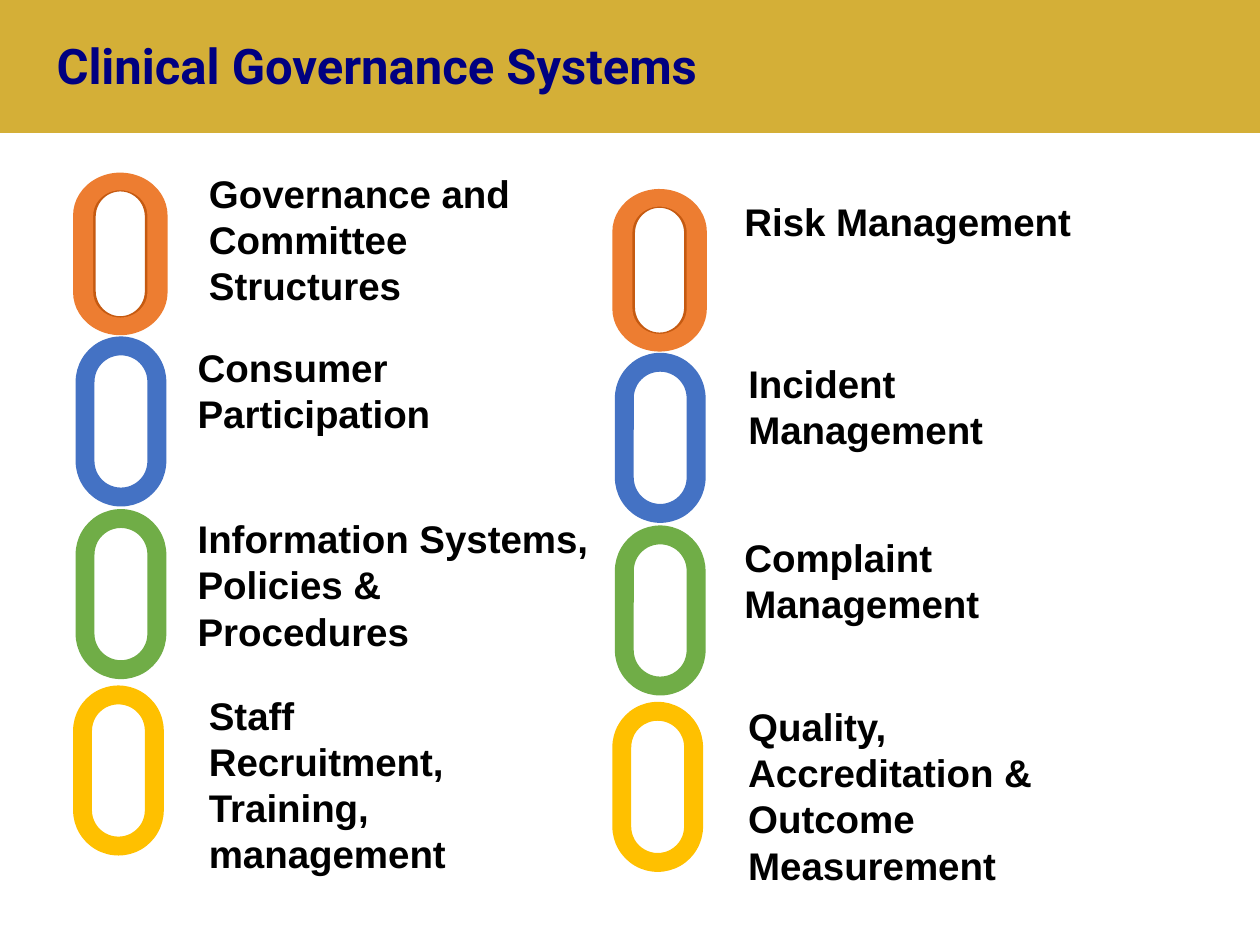
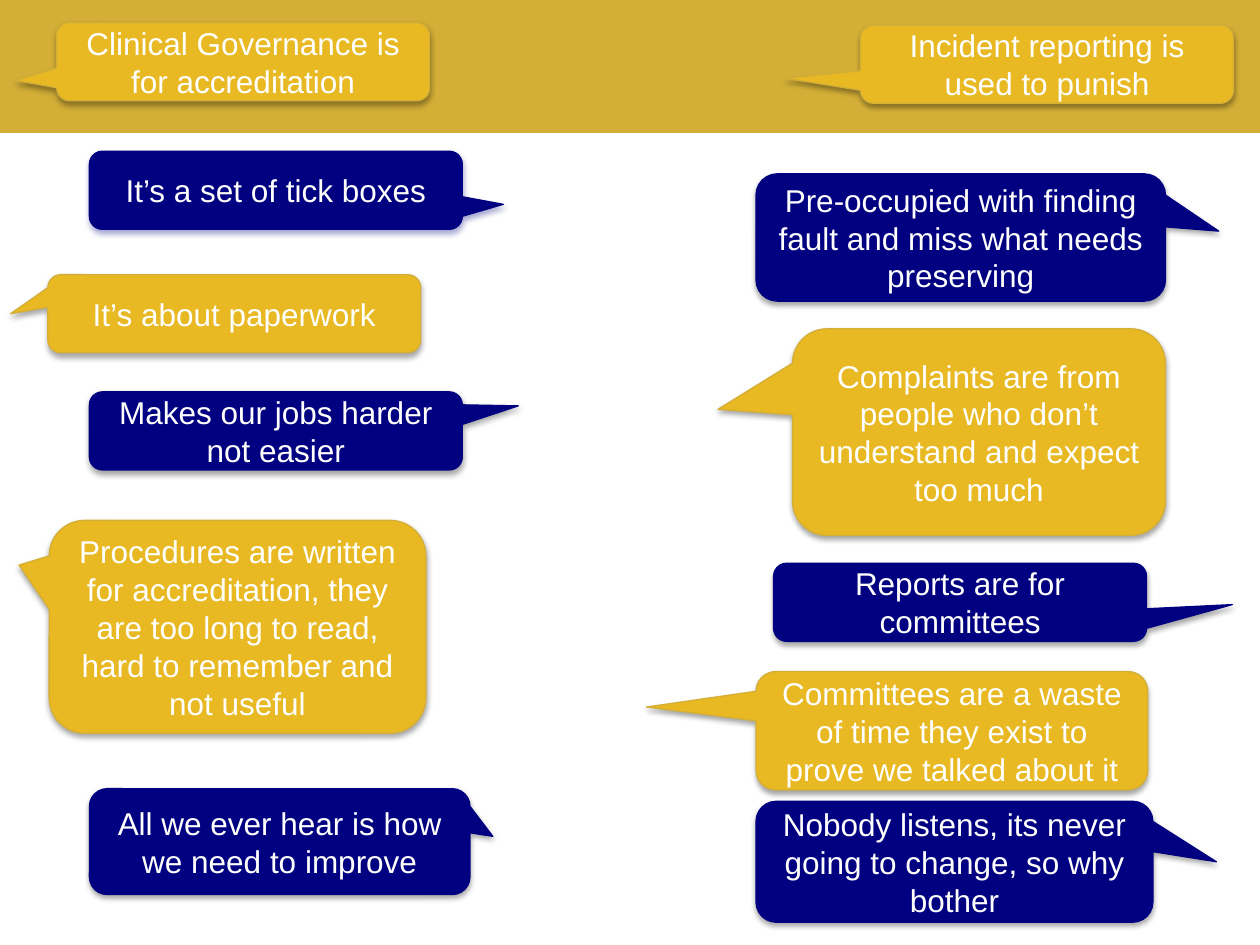
from dataclasses import dataclass

from lxml import etree
from pptx import Presentation
from pptx.dml.color import RGBColor
from pptx.enum.shapes import MSO_SHAPE
from pptx.enum.text import MSO_ANCHOR, MSO_AUTO_SIZE, PP_ALIGN
from pptx.oxml.ns import qn
from pptx.util import Emu, Pt

RECT = MSO_SHAPE.RECTANGLE
CALLOUT = MSO_SHAPE.ROUNDED_RECTANGULAR_CALLOUT
MIDDLE = MSO_ANCHOR.MIDDLE
CENTER = PP_ALIGN.CENTER
LEFT = PP_ALIGN.LEFT
GROW = MSO_AUTO_SIZE.SHAPE_TO_FIT_TEXT

EMU_PER_PX = 9144
SLIDE_W, SLIDE_H = 1000, 750
BAND_H = 105
DEGREE = 60000
QUARTER_STARTS = {0: 270, 2: 0, 3: 90, 5: 180}
SEGMENTS = 6


@dataclass(frozen=True)
class Theme:
    band: str = "D4AF37"
    navy: str = "000080"
    gold: str = "E8B923"
    white: str = "FFFFFF"
    black: str = "000000"
    orange: str = "ED7D31"
    rust: str = "C55A11"
    blue: str = "4472C4"
    green: str = "70AD47"
    amber: str = "FFC000"
    heading_font: str = "Roboto"
    body_font: str = "Arial"
    title_size: int = 28
    label_size: int = 22
    callout_size: int = 18
    line_width: float = 0.75


THEME = Theme()
TITLE_FORMAT = {"name": THEME.heading_font, "size": Pt(THEME.title_size), "bold": True}
LABEL_FORMAT = {"name": THEME.body_font, "size": Pt(THEME.label_size), "bold": True}
CALLOUT_FORMAT = {"name": THEME.body_font, "size": Pt(THEME.callout_size), "bold": False}


@dataclass(frozen=True)
class Capsule:
    x: int
    y: int
    w: int
    h: int
    cap: int


@dataclass(frozen=True)
class Ring:
    x: int
    y: int
    w: int
    h: int
    cap: int
    side: int
    end: int
    color: str


@dataclass(frozen=True)
class Label:
    x: int
    y: int
    w: int
    h: int
    lines: tuple[str, ...]


@dataclass(frozen=True)
class Callout:
    x: int
    y: int
    w: int
    h: int
    tip_x: float
    tip_y: float
    fill: str
    text: str
    shadow: str = THEME.black


RINGS = (
    Ring(60, 267, 72, 135, 36, 15, 15, THEME.blue),
    Ring(62, 138, 67, 127, 34, 14, 14, THEME.rust),
    Ring(58, 137, 75, 129, 34, 16, 14, THEME.orange),
    Ring(60, 404, 72, 135, 36, 15, 15, THEME.green),
    Ring(58, 544, 72, 135, 36, 15, 15, THEME.amber),
)
CHAIN_OFFSETS = ((0, 0), (428, 13))

LABELS = (
    Label(156, 130, 285, 121, ("Governance and Committee Structures",)),
    Label(147, 268, 285, 84, ("Consumer Participation",)),
    Label(147, 404, 375, 121, ("Information Systems, Policies &", "Procedures")),
    Label(156, 544, 250, 158, ("Staff Recruitment, Training, management",)),
    Label(581, 152, 285, 47, ("Risk Management",)),
    Label(584, 281, 285, 84, ("Incident Management",)),
    Label(581, 419, 216, 84, ("Complaint Management",)),
    Label(584, 553, 250, 158, ("Quality, Accreditation & Outcome Measurement",)),
)

CALLOUTS = (
    Callout(45, 18, 296, 62, -0.61, 0.24, THEME.gold,
            "Clinical Governance is for accreditation"),
    Callout(71, 120, 296, 62, 0.61, 0.18, THEME.navy,
            "It’s a set of tick boxes", THEME.navy),
    Callout(38, 218, 296, 62, -0.6, 0, THEME.gold, "It’s about paperwork"),
    Callout(71, 311, 296, 62, 0.65, -0.32, THEME.navy,
            "Makes our jobs harder not easier"),
    Callout(39, 413, 299, 169, -0.58, -0.29, THEME.gold,
            "Procedures are written for accreditation, they are too long to read, "
            "hard to remember and not useful"),
    Callout(71, 626, 302, 84, 0.56, -0.05, THEME.navy,
            "All we ever hear is how we need to improve"),
    Callout(683, 20, 296, 62, -0.7, 0.18, THEME.gold,
            "Incident reporting is used to punish"),
    Callout(600, 138, 325, 101, 0.63, -0.05, THEME.navy,
            "Pre-occupied with finding fault and miss what needs preserving"),
    Callout(629, 261, 296, 164, -0.7, -0.11, THEME.gold,
            "Complaints are from people who don’t understand and expect too much"),
    Callout(614, 447, 296, 62, 0.73, 0.03, THEME.navy, "Reports are for committees"),
    Callout(600, 533, 311, 94, -0.78, -0.2, THEME.gold,
            "Committees are a waste of time they exist to prove we talked about it"),
    Callout(600, 636, 315, 96, 0.66, 0, THEME.navy,
            "Nobody listens, its never going to change, so why bother"),
)


def px(n: float) -> Emu:
    return Emu(round(n * EMU_PER_PX))


def rgb(color: str) -> RGBColor:
    return RGBColor.from_string(color)


def paint(sp, fill: str, line: str) -> None:
    sp.shadow.inherit = False
    sp.fill.solid()
    sp.fill.fore_color.rgb = rgb(fill)
    sp.line.color.rgb = rgb(line)
    sp.line.width = Pt(THEME.line_width)


def write(tf, lines: tuple[str, ...], fmt: dict, color: str, align=LEFT) -> None:
    tf.word_wrap = True
    for i, line in enumerate(lines):
        p = tf.paragraphs[0] if i == 0 else tf.add_paragraph()
        p.alignment = align
        r = p.add_run()
        r.text = line
        for name, value in fmt.items():
            setattr(r.font, name, value)
        r.font.color.rgb = rgb(color)


def add_band(s) -> None:
    sp = s.shapes.add_shape(RECT, 0, 0, px(SLIDE_W), px(BAND_H))
    paint(sp, THEME.band, THEME.band)


def add_label(s, label: Label, fmt: dict, color: str) -> None:
    sp = s.shapes.add_textbox(px(label.x), px(label.y), px(label.w), px(label.h))
    write(sp.text_frame, label.lines, fmt, color)
    sp.text_frame.auto_size = GROW


def corners(c: Capsule) -> list[tuple[Emu, Emu]]:
    mid, right, bottom = c.x + c.w / 2, c.x + c.w, c.y + c.h
    upper, lower = c.y + c.cap, bottom - c.cap
    points = ((mid, c.y), (right, upper), (right, lower), (mid, bottom),
              (c.x, lower), (c.x, upper), (mid, c.y))
    return [(px(x), px(y)) for x, y in points]


def round_corners(sp, capsules: tuple[Capsule, ...]) -> None:
    lines = list(sp._element.iter(qn("a:lnTo")))
    for i, line in enumerate(lines):
        contour, segment = divmod(i, SEGMENTS)
        if segment in QUARTER_STARTS:
            c = capsules[contour]
            arc = etree.Element(qn("a:arcTo"), wR=str(px(c.w / 2)), hR=str(px(c.cap)),
                                stAng=str(QUARTER_STARTS[segment] * DEGREE),
                                swAng=str(90 * DEGREE))
            line.getparent().replace(line, arc)


def add_ring(s, ring: Ring, dx: int, dy: int) -> None:
    x, y = ring.x + dx, ring.y + dy
    outer = Capsule(x, y, ring.w, ring.h, ring.cap)
    inner = Capsule(x + ring.side, y + ring.end, ring.w - 2 * ring.side,
                    ring.h - 2 * ring.end, ring.cap - ring.end)
    start, *rest = corners(outer)
    builder = s.shapes.build_freeform(*start)
    builder.add_line_segments(rest, close=True)
    start, *rest = corners(inner)
    builder.move_to(*start)
    builder.add_line_segments(rest, close=True)
    sp = builder.convert_to_shape()
    round_corners(sp, (outer, inner))
    paint(sp, ring.color, ring.color)
    sp.line.fill.background()


def add_shadow(sp, color: str) -> None:
    effects = sp._element.spPr.find(qn("a:effectLst"))
    shadow = etree.SubElement(effects, qn("a:outerShdw"), blurRad="40000", dist="23000",
                              dir="5400000", rotWithShape="0")
    tint = etree.SubElement(shadow, qn("a:srgbClr"), val=color)
    etree.SubElement(tint, qn("a:alpha"), val="35000")


def add_callout(s, c: Callout) -> None:
    sp = s.shapes.add_shape(CALLOUT, px(c.x), px(c.y), px(c.w), px(c.h))
    sp.adjustments[0] = c.tip_x
    sp.adjustments[1] = c.tip_y
    paint(sp, c.fill, THEME.band if c.fill == THEME.gold else c.fill)
    add_shadow(sp, c.shadow)
    write(sp.text_frame, (c.text,), CALLOUT_FORMAT, THEME.white, CENTER)
    sp.text_frame.vertical_anchor = MIDDLE


def add_slide(prs):
    s = prs.slides.add_slide(prs.slide_layouts[6])
    add_band(s)
    return s


def build_systems(prs) -> None:
    s = add_slide(prs)
    title = Label(35, 23, 965, 57, ("Clinical Governance Systems",))
    add_label(s, title, TITLE_FORMAT, THEME.navy)
    for dx, dy in CHAIN_OFFSETS:
        for ring in RINGS:
            add_ring(s, ring, dx, dy)
    for label in LABELS:
        add_label(s, label, LABEL_FORMAT, THEME.black)


def build_opinions(prs) -> None:
    s = add_slide(prs)
    for callout in CALLOUTS:
        add_callout(s, callout)


def main() -> None:
    prs = Presentation()
    prs.slide_width, prs.slide_height = px(SLIDE_W), px(SLIDE_H)
    build_systems(prs)
    build_opinions(prs)
    prs.save("out.pptx")


if __name__ == "__main__":
    main()
